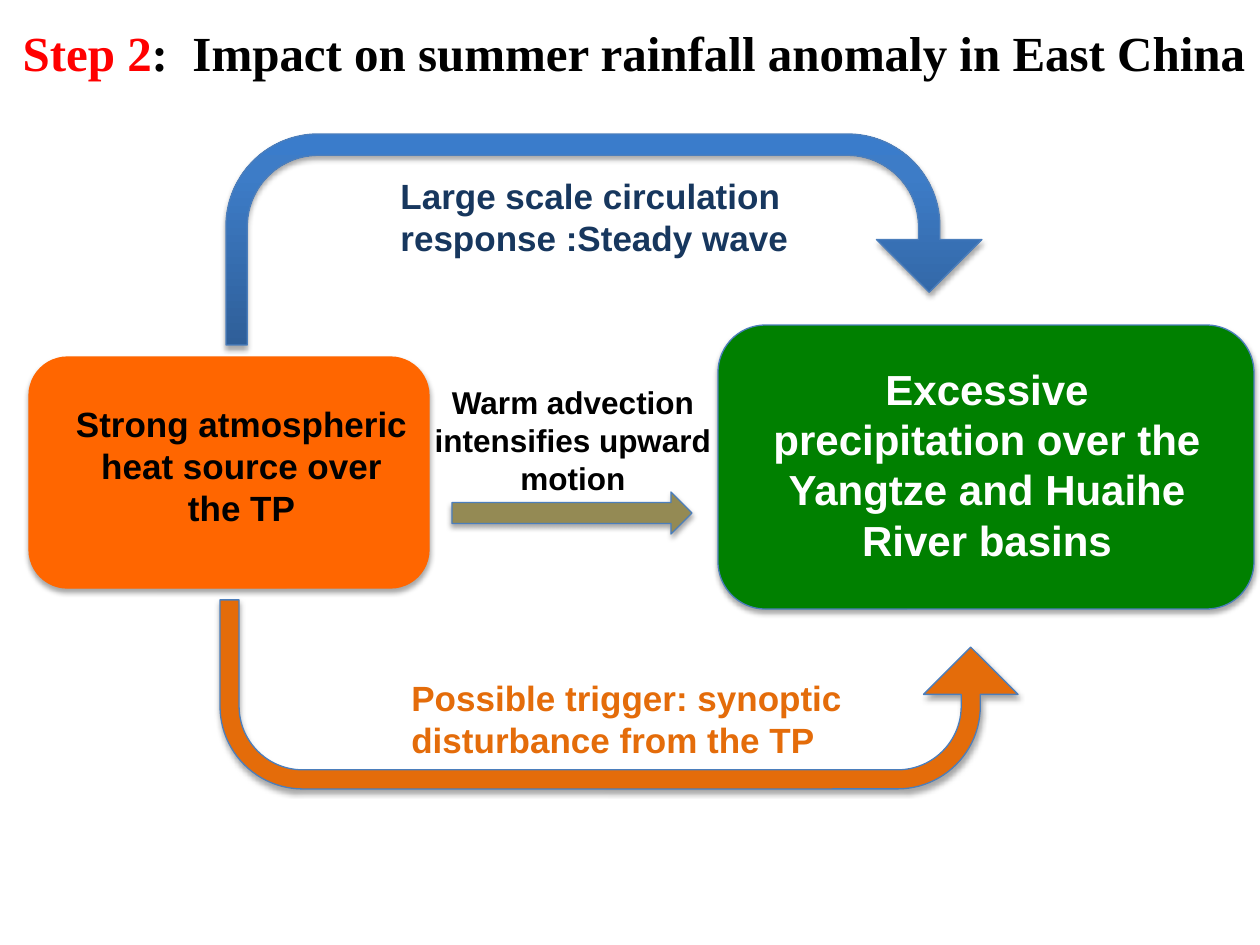
from copy import deepcopy

from lxml.etree import SubElement
from pptx import Presentation
from pptx.dml.color import RGBColor
from pptx.enum.shapes import MSO_SHAPE
from pptx.enum.text import MSO_ANCHOR, MSO_AUTO_SIZE, PP_ALIGN
from pptx.oxml.ns import qn
from pptx.util import Pt

EMU_PER_PX = 914400 / 126
BLACK, WHITE, ORANGE = "000000", "FFFFFF", "E46C0A"
NAVY, OUTLINE = "17375E", "4B7EBC"
BLUE_GRADIENT = [(0, "2F5F99"), (0.8, "3D7CC7"), (1, "3A7CCB")]
UTURN = [0.101, 0.25, 0.25, 0.438, 0.75]


def px(length):
    return round(length * EMU_PER_PX)


def color(value):
    return RGBColor.from_string(value)


class FlowSlide:
    body_font = "Arial"
    title_font = "Times New Roman"

    def __init__(self, deck):
        self.page = deck.slides.add_slide(deck.slide_layouts[5])

    def add_span(self, para, text, size, hue, font):
        span = para.add_run()
        span.text = text
        span.font.name = font
        span.font.size = Pt(size)
        span.font.bold = True
        span.font.color.rgb = color(hue)

    def title(self, place, parts):
        box = self.page.shapes.title
        box.left, box.top, box.width, box.height = map(px, place)
        frame = box.text_frame
        frame.word_wrap = True
        frame.auto_size = MSO_AUTO_SIZE.NONE
        frame.vertical_anchor = MSO_ANCHOR.TOP
        para = frame.paragraphs[0]
        para.alignment = PP_ALIGN.LEFT
        for text, hue in parts:
            self.add_span(para, text, 28, hue, self.title_font)

    def label(self, place, text, size, hue, align=PP_ALIGN.CENTER):
        box = self.page.shapes.add_textbox(*map(px, place))
        frame = box.text_frame
        frame.word_wrap = True
        para = frame.paragraphs[0]
        para.alignment = align
        self.add_span(para, text, size, hue, self.body_font)

    def shape(self, kind, place, fill, line=OUTLINE, adjustments=()):
        """Add a shadowed shape; fill is a hex colour or a list of gradient stops."""
        shape = self.page.shapes.add_shape(kind, *map(px, place))
        for index, value in enumerate(adjustments):
            shape.adjustments[index] = value
        if isinstance(fill, str):
            shape.fill.solid()
            shape.fill.fore_color.rgb = color(fill)
        else:
            self.gradient(shape, fill)
        shape.line.color.rgb = color(line)
        shape.line.width = Pt(0.75)
        self.shadow(shape)
        return shape

    def gradient(self, shape, stops):
        """Fill from bottom to top, adding stops beyond the default two."""
        shape.fill.gradient()
        shape.fill.gradient_angle = 90
        stop_list = shape._element.spPr.find(qn("a:gradFill")).find(qn("a:gsLst"))
        while len(stop_list) < len(stops):
            stop_list.append(deepcopy(stop_list[0]))
        for stop, (position, hue) in zip(shape.fill.gradient_stops, stops):
            stop.position = position
            stop.color.rgb = color(hue)

    def shadow(self, shape):
        shape.shadow.inherit = False
        effects = shape._element.spPr.find(qn("a:effectLst"))
        outer = SubElement(effects, qn("a:outerShdw"), blurRad=str(Pt(3.1)),
                           dist=str(Pt(1.8)), dir="5400000", rotWithShape="0")
        hue = SubElement(outer, qn("a:srgbClr"), val=BLACK)
        SubElement(hue, qn("a:alpha"), val="35000")

    def uturn(self, place, fill, flipped=False):
        arrow = self.shape(MSO_SHAPE.U_TURN_ARROW, place, fill, adjustments=UTURN)
        if flipped:
            arrow._element.spPr.get_or_add_xfrm().set("flipV", "1")


def main():
    deck = Presentation()
    deck.slide_width, deck.slide_height = px(1260), px(945)
    slide = FlowSlide(deck)

    slide.title((10, 16, 1260, 72), [
        ("Step 2", "FF0000"),
        (":  Impact on summer rainfall anomaly in East China", BLACK),
    ])

    slide.shape(MSO_SHAPE.ROUNDED_RECTANGLE, (29, 357, 400, 231), "FF6600", "FF6600")
    slide.label((63, 396, 357, 140), "Strong atmospheric heat source over the TP", 20, BLACK)
    slide.shape(MSO_SHAPE.ROUNDED_RECTANGLE, (718, 325, 536, 284), "008000")
    slide.label((756, 357, 462, 217),
                "Excessive precipitation over the Yangtze and Huaihe River basins", 24, WHITE)

    slide.uturn((226, 134, 756, 211), BLUE_GRADIENT)
    slide.uturn((220, 600, 798, 189), ORANGE, flipped=True)
    slide.label((388, 168, 462, 97), "Large scale circulation response :Steady wave",
                20, NAVY, PP_ALIGN.LEFT)
    slide.label((399, 670, 462, 97), "Possible trigger: synoptic disturbance from the TP",
                20, ORANGE, PP_ALIGN.LEFT)

    slide.shape(MSO_SHAPE.RIGHT_ARROW, (452, 492, 240, 42), "948A54")
    slide.label((384, 377, 378, 127), "Warm advection intensifies upward motion", 18, BLACK)

    deck.save("out.pptx")


if __name__ == "__main__":
    main()
